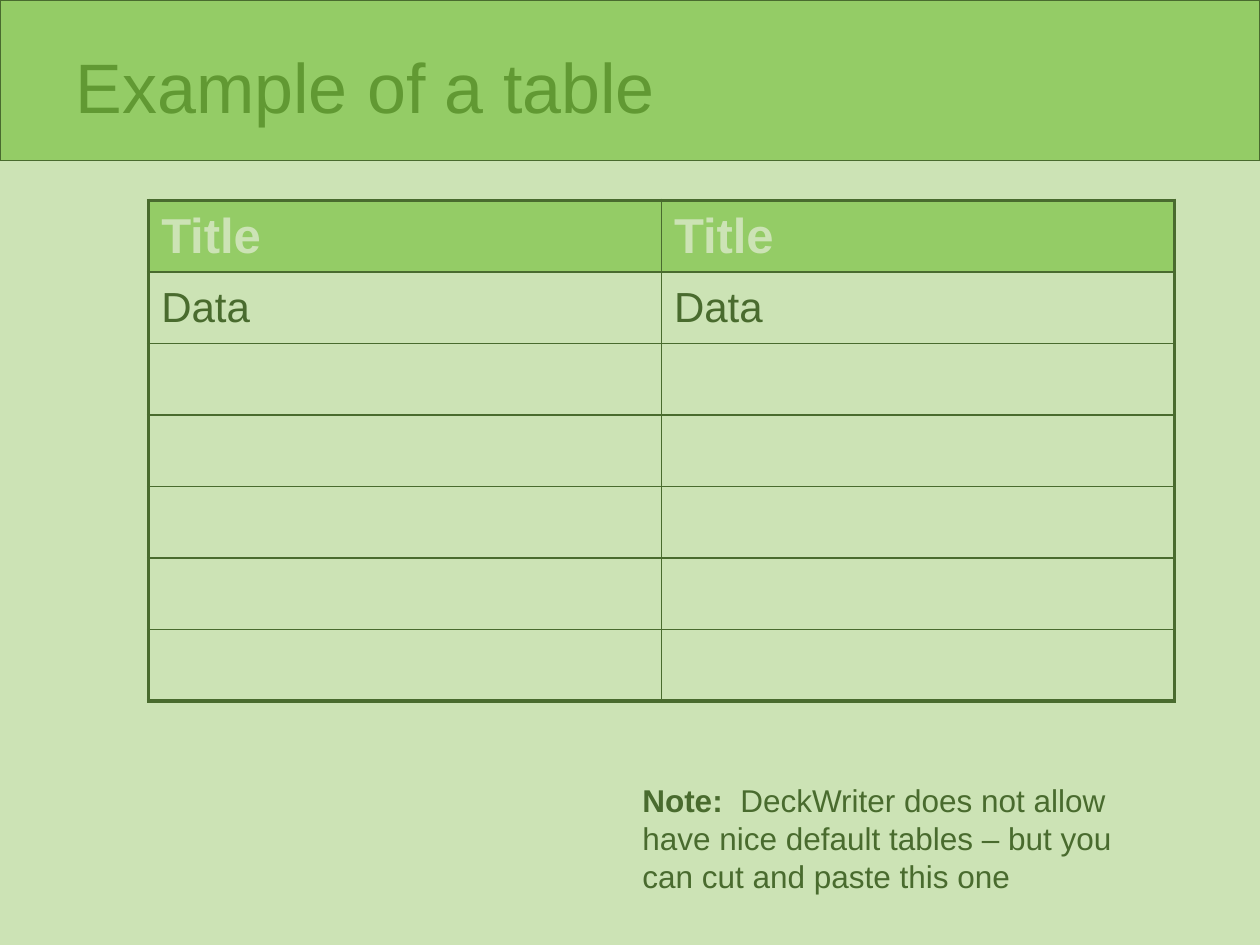
from dataclasses import dataclass

from lxml import etree
from pptx import Presentation
from pptx.dml.color import RGBColor
from pptx.enum.shapes import MSO_SHAPE
from pptx.enum.text import MSO_ANCHOR, PP_ALIGN
from pptx.oxml.ns import qn
from pptx.util import Inches, Pt

RECT = MSO_SHAPE.RECTANGLE
MID = MSO_ANCHOR.MIDDLE
LEFT = PP_ALIGN.LEFT

WIDE, HIGH = Inches(10), Inches(7.5)
FONT = "Arial"
HUES = {"pale": "CCE3B5", "band": "94CC66", "title": "619933", "dark": "496B2E"}
THIN, THICK = 1, 2.25
ROWS, COLS = 7, 2


@dataclass
class Box:
    left: float
    top: float
    width: float
    height: float

    def place(self) -> tuple:
        return (int(self.left * WIDE), int(self.top * HIGH),
                int(self.width * WIDE), int(self.height * HIGH))


@dataclass
class Row:
    text: str
    size: float
    hue: str
    bold: bool = False
    fill: str = ""


BAND = Box(0, 0, 1, 0.17)
HEAD = Box(0.05, 0.03, 0.89, 0.12)
GRID = Box(0.12, 0.21, 0.81, 0.53)
NOTE = Box(0.5, 0.82, 0.42, 0.13)

DATA = [Row("Title", 28, "pale", True, "band"), Row("Data", 24, "dark")]
DATA += [Row("", 24, "dark")] * (ROWS - len(DATA))


def tint(name: str) -> RGBColor:
    return RGBColor.from_string(HUES[name])


def write(para, text: str, *, size: float, hue: str, bold: bool = False) -> None:
    para.alignment = LEFT
    run = para.add_run()
    run.text = text
    run.font.name = FONT
    run.font.size = Pt(size)
    run.font.bold = bold
    run.font.color.rgb = tint(hue)


def edge(cell, side: str, width: float) -> None:
    props = cell._tc.get_or_add_tcPr()
    line = etree.SubElement(props, qn("a:ln" + side), w=str(Pt(width)))
    fill = etree.SubElement(line, qn("a:solidFill"))
    etree.SubElement(fill, qn("a:srgbClr"), val=HUES["dark"])


def draw_cell(cell, row: Row, r: int, c: int) -> None:
    outer = {"L": c == 0, "R": c == COLS - 1, "T": r == 0, "B": r == ROWS - 1}
    for side, rim in outer.items():
        edge(cell, side, THICK if rim else THIN)
    if row.fill:
        cell.fill.solid()
        cell.fill.fore_color.rgb = tint(row.fill)
    else:
        cell.fill.background()
    cell.vertical_anchor = MID
    if row.text:
        write(cell.text_frame.paragraphs[0], row.text,
              size=row.size, hue=row.hue, bold=row.bold)


def draw_grid(slide) -> None:
    left, top, width, height = Box(0.118, 0.212, 0.814, 0.53).place()
    table = slide.shapes.add_table(ROWS, COLS, left, top, width, height).table
    table.first_row = table.horz_banding = False
    for r, row in enumerate(DATA):
        for c in range(COLS):
            draw_cell(table.cell(r, c), row, r, c)


def draw_band(slide) -> None:
    band = slide.shapes.add_shape(RECT, *BAND.place())
    band.shadow.inherit = False
    band.fill.solid()
    band.fill.fore_color.rgb = tint("band")
    band.line.color.rgb = tint("dark")
    band.line.width = Pt(0.75)
    slide.shapes._spTree.insert(2, band._element)


def draw_head(slide) -> None:
    head = slide.shapes.title
    head.left, head.top, head.width, head.height = HEAD.place()
    head.text_frame.vertical_anchor = MID
    write(head.text_frame.paragraphs[0], "Example of a table", size=40, hue="title")


def draw_note(slide) -> None:
    frame = slide.shapes.add_textbox(*NOTE.place()).text_frame
    frame.word_wrap = True
    para = frame.paragraphs[0]
    write(para, "Note:  ", size=18, hue="dark", bold=True)
    write(para, "DeckWriter does not allow have nice default tables – "
          "but you can cut and paste this one", size=18, hue="dark")


def main() -> None:
    deck = Presentation()
    deck.slide_width, deck.slide_height = WIDE, HIGH
    slide = deck.slides.add_slide(deck.slide_layouts[5])
    slide.background.fill.solid()
    slide.background.fill.fore_color.rgb = tint("pale")
    draw_band(slide)
    draw_head(slide)
    draw_grid(slide)
    draw_note(slide)
    deck.save("out.pptx")


if __name__ == "__main__":
    main()
